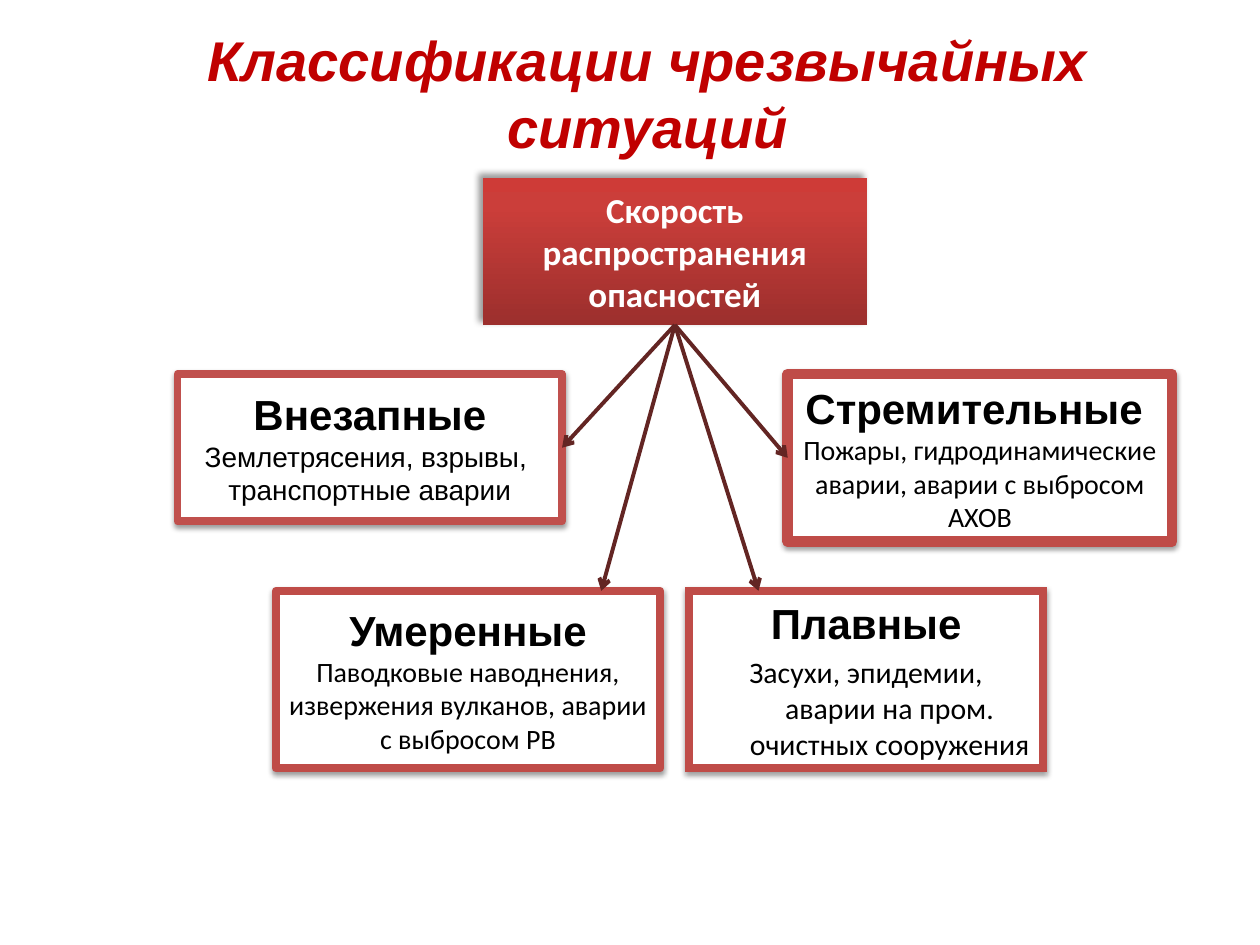
from pptx import Presentation
from pptx.dml.color import RGBColor
from pptx.enum.shapes import MSO_CONNECTOR, MSO_SHAPE
from pptx.enum.text import MSO_ANCHOR, PP_ALIGN
from pptx.oxml import parse_xml
from pptx.oxml.ns import nsdecls
from pptx.util import Cm, Pt

COLORS = {
    "title": "C00000", "white": "FFFFFF", "black": "000000",
    "border": "BF4C48", "border_light": "C0504D", "arrow": "632523",
    "dark": "9C2F2D", "middle": "CB3E3A", "bright": "CE3B37",
}
TOP, RIGHT, BOTTOM, LEFT = 0, 3, 2, 1


def rgb(name):
    return RGBColor.from_string(COLORS[name])


def drawing(tag, attributes="", content=""):
    return parse_xml(f'<a:{tag} {nsdecls("a")} {attributes}>{content}</a:{tag}>')


def write(shape, lines, color, indent=0, spacing=0):
    """Fill a shape with centred lines of (text, size, font, bold, italic)."""
    frame = shape.text_frame
    frame.word_wrap = True
    frame.vertical_anchor = MSO_ANCHOR.MIDDLE
    for index, (text, size, font, bold, italic) in enumerate(lines):
        paragraph = frame.paragraphs[0] if index == 0 else frame.add_paragraph()
        paragraph.text = text
        paragraph.alignment = PP_ALIGN.CENTER
        paragraph.font.size = Pt(size)
        paragraph.font.name = font
        paragraph.font.bold = bold
        paragraph.font.italic = italic
        paragraph.font.color.rgb = rgb(color)
        if spacing:
            paragraph.space_before = Pt(size * spacing)
        if indent:
            properties = paragraph._p.get_or_add_pPr()
            properties.set("marL", str(Cm(indent)))
            properties.set("indent", str(-Cm(indent)))


def add_rectangle(slide, box, blur, distance, angle, opacity):
    """Add a rectangle with an outer shadow."""
    shape = slide.shapes.add_shape(MSO_SHAPE.RECTANGLE, *map(Cm, box))
    shape.shadow.inherit = False
    shadow = drawing(
        "outerShdw",
        f'blurRad="{Pt(blur)}" dist="{Pt(distance)}" dir="{angle * 60000}" rotWithShape="0"',
        f'<a:srgbClr val="{COLORS["black"]}"><a:alpha val="{opacity * 1000}"/></a:srgbClr>')
    shape._element.spPr.find(shadow.tag.replace("outerShdw", "effectLst")).append(shadow)
    return shape


def add_title(slide, box):
    title = slide.shapes.add_textbox(*map(Cm, box))
    write(title, [("Классификации чрезвычайных ситуаций", 32, "Arial", True, True)], "title")


def add_header(slide, box):
    header = add_rectangle(slide, box, 4, 3, 225, 40)
    header.line.fill.background()
    stops = "".join(
        f'<a:gs pos="{position * 1000}"><a:srgbClr val="{COLORS[name]}"/></a:gs>'
        for position, name in ((0, "dark"), (80, "middle"), (100, "bright")))
    gradient = drawing(
        "gradFill", 'rotWithShape="1"',
        f'<a:gsLst>{stops}</a:gsLst><a:lin ang="{270 * 60000}" scaled="0"/>')
    header._element.spPr.prstGeom.addnext(gradient)
    write(header, [("Скорость распространения опасностей", 20, "Calibri", True, False)], "white")
    return header


def add_card(slide, box, heading, details, size=16, font="Calibri", border="border",
             width=4.5, rounded=True, indent=0, spacing=0):
    card = add_rectangle(slide, box, 3.1, 1.6, 90, 38)
    card.fill.solid()
    card.fill.fore_color.rgb = rgb("white")
    card.line.color.rgb = rgb(border)
    card.line.width = Pt(width)
    outline = card.line._get_or_add_ln()
    outline.append(drawing("round") if rounded else drawing("miter", 'lim="800000"'))
    lines = [(heading, 24, "Arial", True, False)]
    lines += [(text, size, font, False, False) for text in details]
    write(card, lines, "black", indent, spacing)
    return card


def add_arrow(slide, header, card, side=None, end=(0, 0)):
    """Draw an arrow from the header to a card's side, or to a given point."""
    arrow = slide.shapes.add_connector(MSO_CONNECTOR.STRAIGHT, 0, 0, *map(Cm, end))
    arrow.begin_connect(header, BOTTOM)
    if side is not None:
        arrow.end_connect(card, side)
    arrow.line.color.rgb = rgb("arrow")
    arrow.line.width = Pt(2.25)
    arrow.line._get_or_add_ln().append(drawing("tailEnd", 'type="arrow"'))
    arrow._element.spPr.append(drawing("effectLst"))


def build_slide(presentation):
    slide = presentation.slides.add_slide(presentation.slide_layouts[6])
    width, upper, lower = 7.75, 7.54, 11.91
    add_title(slide, (1.3, 0.76, 23.52, 2.21))

    # Four kinds of emergency under one header
    add_card(
        slide, (13.89, lower, 7.14, 3.58), "Плавные",
        ["Засухи, эпидемии, аварии на пром. очистных сооружения"],
        size=17, rounded=False, indent=0.95, spacing=0.2)
    header = add_header(slide, (9.73, 3.58, width, 2.97))
    add_card(
        slide, (5.56, lower, width, 3.58), "Умеренные",
        ["Паводковые наводнения, извержения вулканов, аварии с выбросом РВ"])
    rapid = add_card(
        slide, (15.88, upper, width, 3.38), "Стремительные ",
        ["Пожары, гидродинамические аварии, аварии с выбросом АХОВ"], width=6)
    sudden = add_card(
        slide, (3.58, upper, width, 2.97), "Внезапные",
        ["Землетрясения, взрывы, ", "транспортные аварии"],
        font="Arial", border="border_light")

    # Arrows from the header
    add_arrow(slide, header, sudden, RIGHT)
    for x in (12.12, 15.29):
        add_arrow(slide, header, None, end=(x, lower))
    add_arrow(slide, header, rapid, LEFT)


def main():
    presentation = Presentation()
    presentation.slide_width = Cm(25.4)
    presentation.slide_height = Cm(19.05)
    build_slide(presentation)
    presentation.save("out.pptx")


if __name__ == "__main__":
    main()
